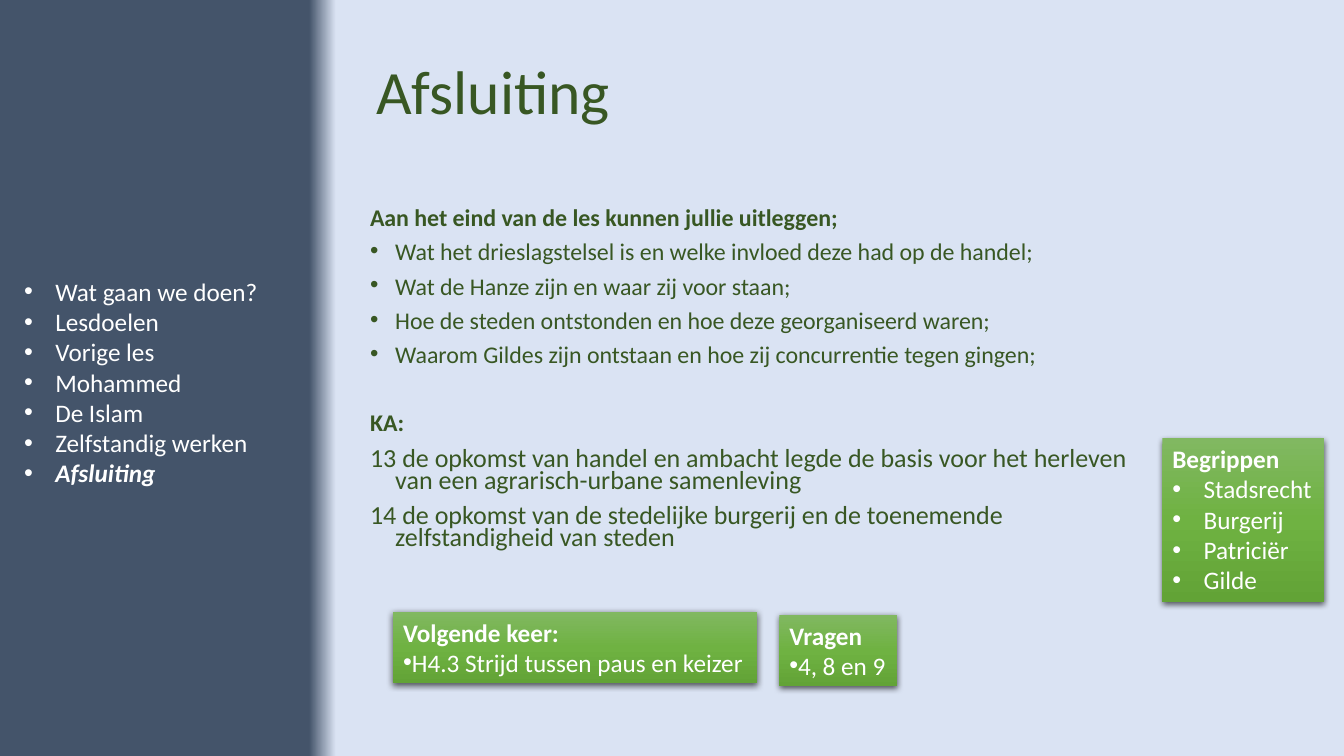
from copy import deepcopy

from lxml import etree
from pptx import Presentation
from pptx.dml.color import RGBColor
from pptx.enum.shapes import MSO_SHAPE
from pptx.enum.text import MSO_ANCHOR, MSO_AUTO_SIZE, PP_ALIGN
from pptx.oxml.ns import qn
from pptx.util import Inches, Pt

RECT = MSO_SHAPE.RECTANGLE
TOP, MIDDLE = MSO_ANCHOR.TOP, MSO_ANCHOR.MIDDLE
LEFT = PP_ALIGN.LEFT
FIT, FIXED = MSO_AUTO_SIZE.SHAPE_TO_FIT_TEXT, MSO_AUTO_SIZE.NONE

GREEN = RGBColor(0x38, 0x57, 0x23)
WHITE = RGBColor(0xFF, 0xFF, 0xFF)
BLACK = "000000"
BACK = [(0.23, RGBColor(0x44, 0x54, 0x6A)), (0.25, RGBColor(0xDA, 0xE3, 0xF3))]
LEAF = [(0, RGBColor(0x81, 0xB8, 0x61)), (0.5, RGBColor(0x6F, 0xB2, 0x42)),
        (1, RGBColor(0x62, 0xA3, 0x36))]

# Content
TITLE = "Afsluiting"
MENU = ["Wat gaan we doen?", "Lesdoelen", "Vorige les", "Mohammed", "De Islam",
        "Zelfstandig werken", "Afsluiting"]
GOAL = "Aan het eind van de les kunnen jullie uitleggen;"
GOALS = [
    "Wat het drieslagstelsel is en welke invloed deze had op de handel;",
    "Wat de Hanze zijn en waar zij voor staan;",
    "Hoe de steden ontstonden en hoe deze georganiseerd waren;",
    "Waarom Gildes zijn ontstaan en hoe zij concurrentie tegen gingen;",
]
THEME = "KA:"
THEMES = [
    "13 de opkomst van handel en ambacht legde de basis voor het herleven "
    "van een agrarisch-urbane samenleving",
    "14 de opkomst van de stedelijke burgerij en de toenemende "
    "zelfstandigheid van steden",
]
# Box: place, heading, items, indent
BOXES = [
    ((3.9, 6.07, 3.61, 0.71), "Volgende keer:",
     ["H4.3 Strijd tussen paus en keizer"], 0),
    ((11.53, 4.35, 1.6, 1.62), "Begrippen",
     ["Stadsrecht", "Burgerij", "Patriciër", "Gilde"], 0.31),
    ((7.73, 6.1, 1.17, 0.71), "Vragen", ["4, 8 en 9"], 0),
]


def place(shape, spot):
    shape.left, shape.top, shape.width, shape.height = map(Inches, spot)


def blend(fill, root, stops, angle):
    fill.gradient()
    fill.gradient_angle = angle
    group = next(root.iter(qn("a:gsLst")))
    while len(group) < len(stops):
        group.append(deepcopy(group[-1]))
    for stop, (share, color) in zip(fill.gradient_stops, stops):
        stop.position = share
        stop.color.rgb = color


def shade(shape):
    shape.shadow.inherit = False
    effects = shape.element.spPr.find(qn("a:effectLst"))
    outer = etree.SubElement(effects, qn("a:outerShdw"), blurRad=str(Pt(4.5)),
                             dist=str(Pt(1.5)), dir="5400000", rotWithShape="0")
    color = etree.SubElement(outer, qn("a:srgbClr"), val=BLACK)
    etree.SubElement(color, qn("a:alpha"), val="63000")


def write(frame, lines, size, color):
    """Fill a frame with lines of (text, bold, bullet, indent)."""
    for i, (text, bold, bullet, indent) in enumerate(lines):
        para = frame.add_paragraph() if i else frame.paragraphs[0]
        para.text = text
        para.alignment = LEFT
        font = para.font
        font.name, font.size, font.bold = "Calibri", Pt(size), bold
        font.color.rgb = color
        props = para._p.get_or_add_pPr()
        props.set("marL", str(Inches(indent)))
        props.set("indent", str(-Inches(indent)))
        if bullet:
            etree.SubElement(props, qn("a:buFont"), typeface="Arial")
            etree.SubElement(props, qn("a:buChar"), char="•")
        else:
            etree.SubElement(props, qn("a:buNone"))
        # Run settings follow the bullet in the schema
        props.append(props.find(qn("a:defRPr")))
    return frame.paragraphs


def hug(frame):
    frame.word_wrap = False
    frame.auto_size = FIT
    frame.vertical_anchor = TOP


deck = Presentation()
deck.slide_width, deck.slide_height = Inches(13.33), Inches(7.5)
slide = deck.slides.add_slide(deck.slide_layouts[1])
blend(slide.background.fill, slide.element, BACK, 0)

# Title
title = slide.shapes.title
place(title, (3.63, 0.21, 9.2, 1.45))
title.text_frame.auto_size = FIXED
title.text_frame.vertical_anchor = MIDDLE
write(title.text_frame, [(TITLE, False, False, 0)], 44, GREEN)[0].line_spacing = 0.9

# Goals and themes
body = slide.placeholders[1]
place(body, (3.57, 2.04, 7.9, 3.59))
body.text_frame.auto_size = FIXED
lines = [(GOAL, True, False, 0)]
lines += [(text, False, True, 0.25) for text in GOALS]
lines += [(THEME, True, False, 0)]
lines += [(text, False, False, 0.25) for text in THEMES]
for para in write(body.text_frame, lines, 17.1, GREEN):
    para.line_spacing = 0.7
    para.space_before = Pt(34.5 if para.text == THEME else 10)
    if para.text in THEMES:
        para.font.size = Pt(18.6)

# Side menu, with the current part marked
menu = slide.shapes.add_textbox(*map(Inches, (0.14, 2.69, 2.55, 2.22))).text_frame
hug(menu)
items = write(menu, [(text, text == TITLE, True, 0.31) for text in MENU], 18, WHITE)
items[-1].font.italic = True

# Green boxes
for spot, head, points, indent in BOXES:
    box = slide.shapes.add_shape(RECT, *map(Inches, spot))
    blend(box.fill, box.element, LEAF, 270)
    box.line.fill.background()
    shade(box)
    hug(box.text_frame)
    lines = [(head, True, False, 0)]
    lines += [(text, False, True, indent) for text in points]
    write(box.text_frame, lines, 18, WHITE)

deck.save("out.pptx")
